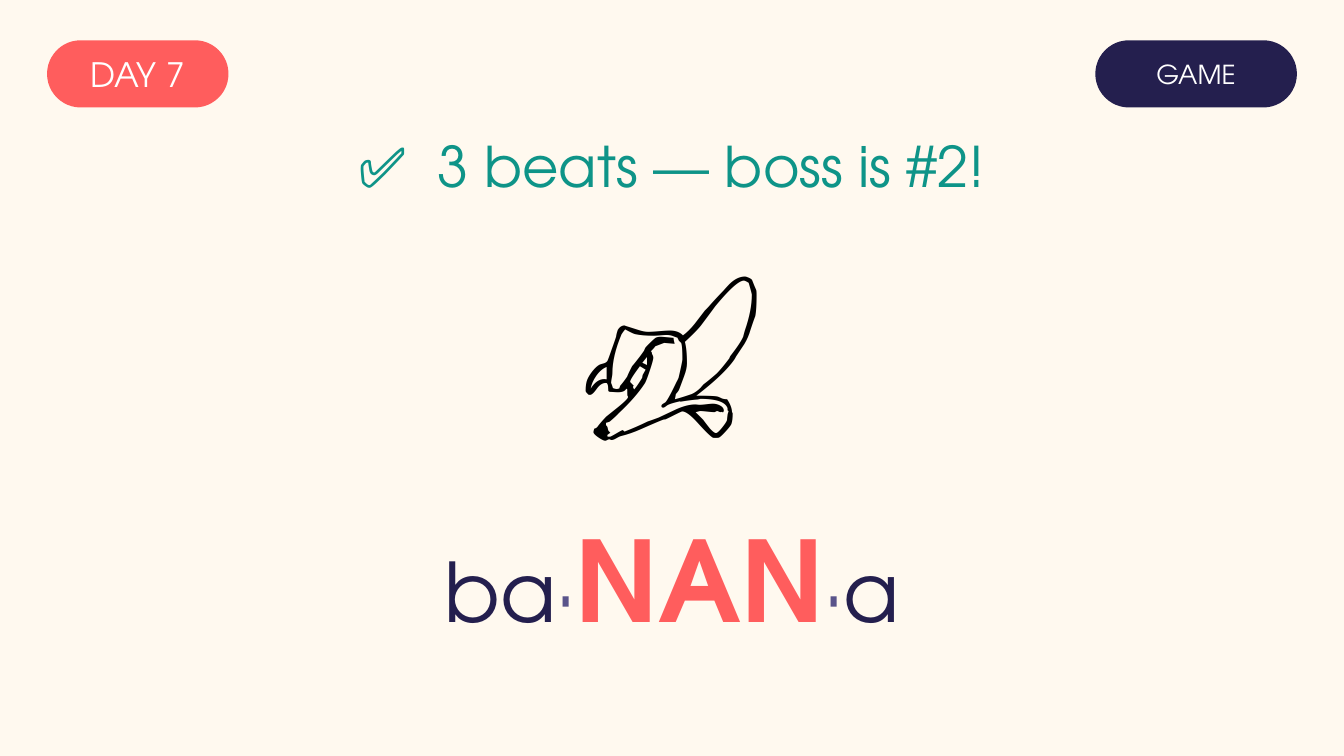
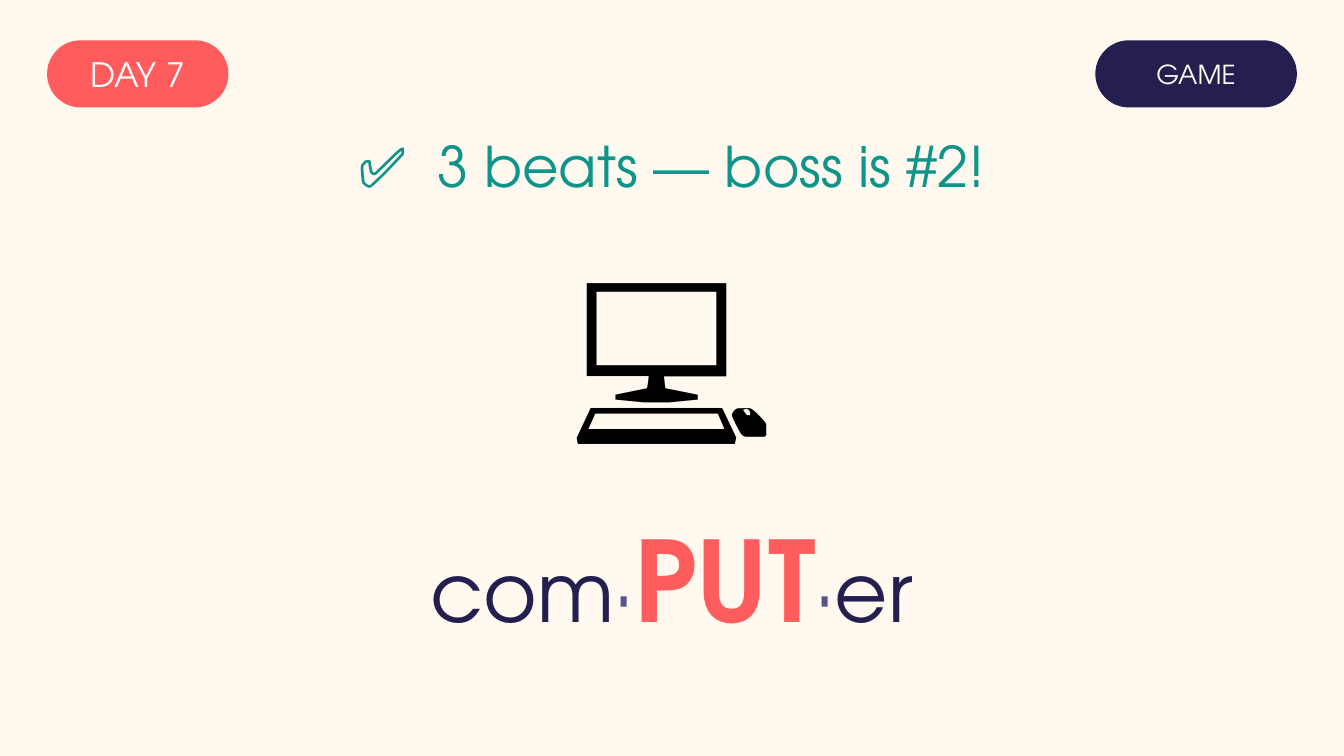
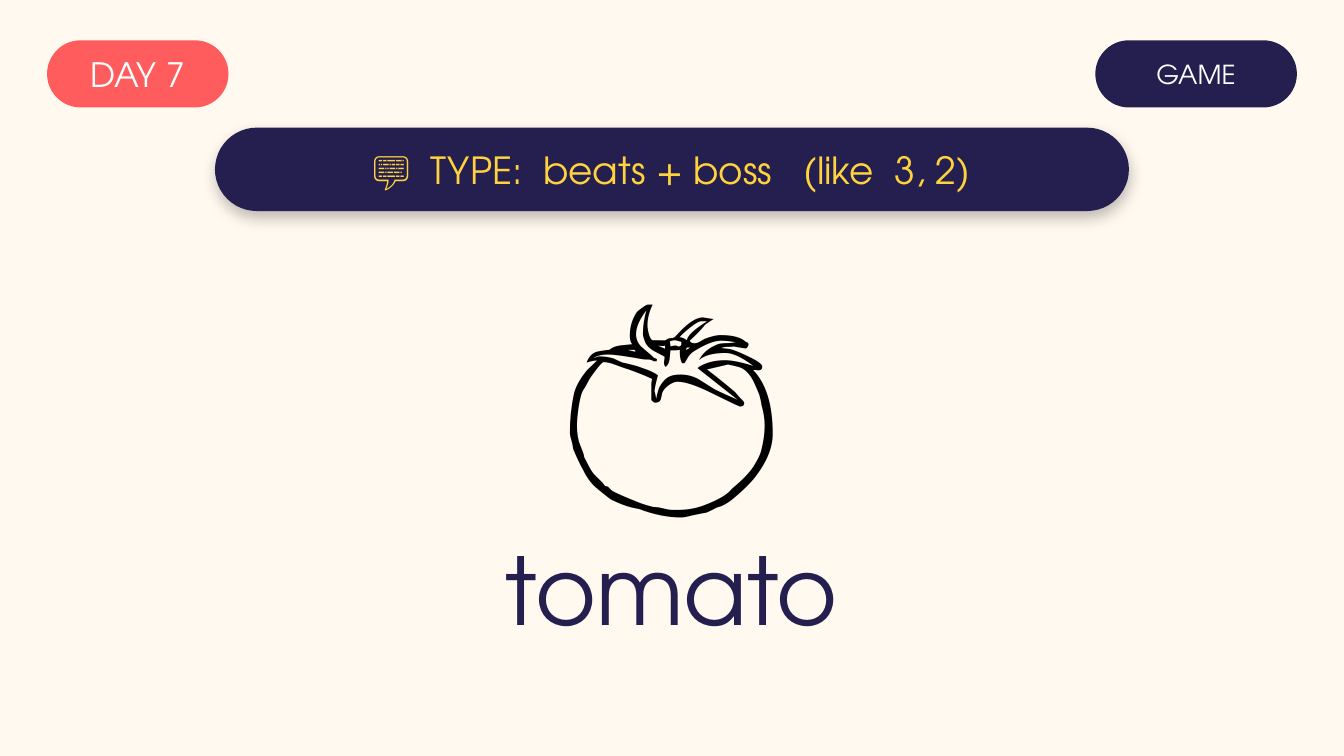
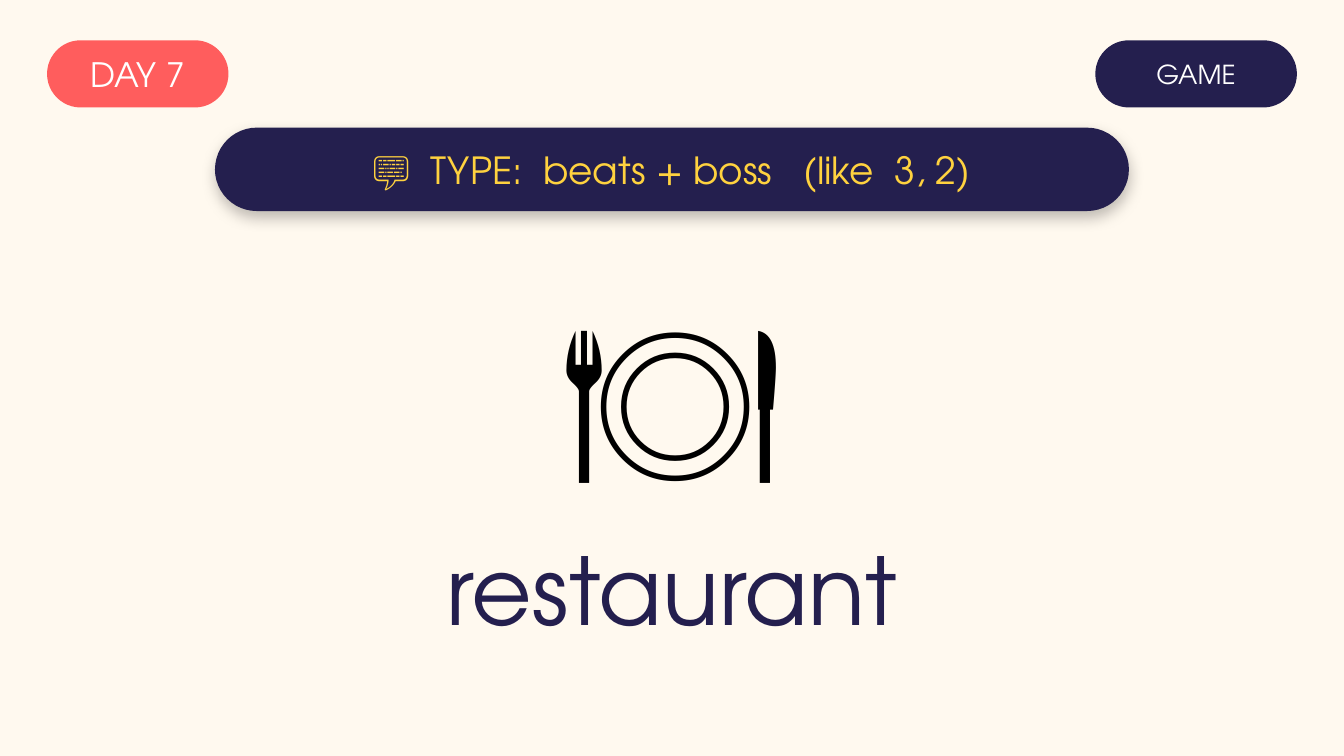
"""Build four word-stress game slides: two answers and two questions."""
from lxml import etree
from pptx import Presentation
from pptx import util as u
from pptx.dml.color import RGBColor
from pptx.enum import shapes, text
from pptx.oxml import ns

COLORS = {
    "cream": "FFF9EF", "coral": "FF5D5D", "navy": "241F4E", "white": "FFFFFF",
    "teal": "0E9488", "violet": "5A548A", "yellow": "FFD23F", "black": "000000",
}
FONT, EMOJI_FONT = "TeX Gyre Adventor", "Calibri"
WIDTH = 10
HEIGHT = WIDTH * 9 / 16

BADGES = [
    ("DAY 7", (0.35, 0.3, 1.35, 0.5), "coral", 18),
    ("GAME", (8.15, 0.3, 1.5, 0.5), "navy", 14),
]
ANSWER = "✅  3 beats — boss is #2!"
PROMPT = "💬  TYPE:  beats + boss   (like  3, 2)"
LAYOUTS = {
    "answer": {"emoji": (0, 1.62, WIDTH, 1.55), "emoji_size": 102, "word": (0, 3.8, WIDTH, 1)},
    "question": {"emoji": (0, 1.7, WIDTH, 2), "emoji_size": 132, "word": (0, 3.95, WIDTH, 0.85)},
}
SLIDES = [
    ("answer", "🍌", ("ba", "NAN", "a")),
    ("answer", "💻", ("com", "PUT", "er")),
    ("question", "🍅", ("tomato",)),
    ("question", "🍽️", ("restaurant",)),
]


def rgb(name):
    return RGBColor.from_string(COLORS[name])


def place(sp, box):
    sp.left, sp.top, sp.width, sp.height = map(u.Inches, box)


def write(sp, runs, anchor=text.MSO_ANCHOR.MIDDLE, font=FONT):
    """Write centred runs given as (text, size, color, bold)."""
    tf = sp.text_frame
    tf.word_wrap = True
    tf.auto_size = text.MSO_AUTO_SIZE.NONE
    tf.vertical_anchor = anchor
    p = tf.paragraphs[0]
    p.alignment = text.PP_ALIGN.CENTER
    for content, size, color, bold in runs:
        r = p.add_run()
        r.text = content
        r.font.name, r.font.size, r.font.bold = font, u.Pt(size), bold
        r.font.color.rgb = rgb(color)


def add_text(s, box, run, **style):
    write(s.shapes.add_textbox(*map(u.Inches, box)), [run], **style)


def add_pill(s, box, fill, run):
    sp = s.shapes.add_shape(shapes.MSO_SHAPE.ROUNDED_RECTANGLE, *map(u.Inches, box))
    sp.adjustments[0] = 0.5
    sp.shadow.inherit = False
    sp.fill.solid()
    sp.fill.fore_color.rgb = rgb(fill)
    sp.line.fill.background()
    tf = sp.text_frame
    tf.margin_left = tf.margin_top = tf.margin_right = tf.margin_bottom = 0
    write(sp, [run])
    return sp


def add_shadow(sp):
    effects = sp.element.spPr.find(ns.qn("a:effectLst"))
    shadow = etree.SubElement(effects, ns.qn("a:outerShdw"), blurRad=str(u.Pt(8)),
                              dist=str(u.Pt(3)), dir="5400000", algn="ctr", rotWithShape="0")
    color = etree.SubElement(shadow, ns.qn("a:srgbClr"), val=COLORS["black"])
    etree.SubElement(color, ns.qn("a:alpha"), val="25000")


def word_runs(parts):
    if len(parts) == 1:
        return [(parts[0], 50, "navy", False)]
    before, boss, after = parts
    dot = ("·", 44, "violet", False)
    return [(before, 44, "navy", False), dot, (boss, 60, "coral", True), dot,
            (after, 44, "navy", False)]


def add_slide(prs, kind, emoji, parts):
    s = prs.slides.add_slide(prs.slide_layouts[5])
    layout = LAYOUTS[kind]
    for label, box, fill, size in BADGES:
        add_pill(s, box, fill, (label, size, "white", False))
    if kind == "answer":
        add_text(s, (0, 0.92, WIDTH, 0.62), (ANSWER, 30, "teal", False))
    else:
        add_shadow(add_pill(s, (1.6, 0.95, 6.8, 0.62), "navy", (PROMPT, 20, "yellow", False)))
    add_text(s, layout["emoji"], (emoji, layout["emoji_size"], "black", False),
             anchor=text.MSO_ANCHOR.TOP, font=EMOJI_FONT)
    place(s.shapes.title, layout["word"])
    write(s.shapes.title, word_runs(parts))


def main():
    prs = Presentation()
    prs.slide_width, prs.slide_height = u.Inches(WIDTH), u.Inches(HEIGHT)
    fill = prs.slide_master.background.fill
    fill.solid()
    fill.fore_color.rgb = rgb("cream")
    for kind, emoji, parts in SLIDES:
        add_slide(prs, kind, emoji, parts)
    prs.save("out.pptx")


if __name__ == "__main__":
    main()
